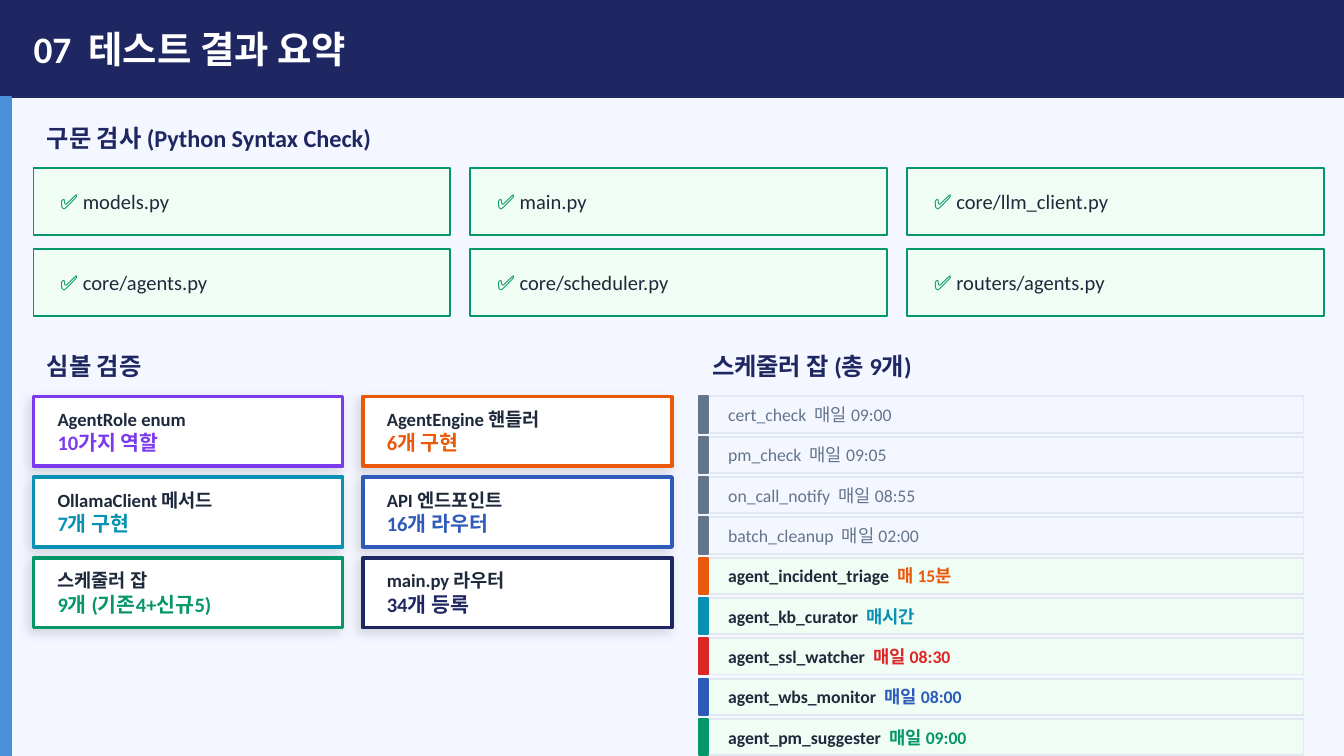
import pptx
import pptx.dml.color
import pptx.enum.shapes
import pptx.enum.text
import pptx.oxml
import pptx.oxml.ns
import pptx.util

RGBColor = pptx.dml.color.RGBColor
NAVY = RGBColor(0x1E, 0x27, 0x61)
SKY = RGBColor(0x4A, 0x90, 0xD9)
BLUE = RGBColor(0x2E, 0x5B, 0xBA)
PAPER = RGBColor(0xF4, 0xF7, 0xFF)
WHITE = RGBColor(0xFF, 0xFF, 0xFF)
MINT = RGBColor(0xF0, 0xFD, 0xF4)
GREEN = RGBColor(0x05, 0x96, 0x69)
VIOLET = RGBColor(0x7C, 0x3A, 0xED)
ORANGE = RGBColor(0xEA, 0x58, 0x0C)
TEAL = RGBColor(0x08, 0x91, 0xB2)
RED = RGBColor(0xDC, 0x26, 0x26)
INK = RGBColor(0x1E, 0x29, 0x3B)
SLATE = RGBColor(0x64, 0x74, 0x8B)
RULE = RGBColor(0xE2, 0xE8, 0xF0)

EMU_PER_PX = 4572  # 200 px to the inch
FONT = "Calibri"

SHADOW = (
    f'<a:effectLst {pptx.oxml.ns.nsdecls("a")}>'
    '<a:outerShdw blurRad="76200" dist="38100" dir="8100000" algn="bl" rotWithShape="0">'
    '<a:srgbClr val="000000"><a:alpha val="12000"/></a:srgbClr>'
    "</a:outerShdw></a:effectLst>"
)


def px(*lengths):
    return [pptx.util.Emu(length * EMU_PER_PX) for length in lengths]


class SlideBuilder:
    def __init__(self, slide):
        self.slide = slide

    def background(self, color):
        fill = self.slide.background.fill
        fill.solid()
        fill.fore_color.rgb = color

    def box(self, left, top, width, height, fill, line, weight=1, shadow=False):
        shape = self.slide.shapes.add_shape(
            pptx.enum.shapes.MSO_SHAPE.RECTANGLE, *px(left, top, width, height))
        shape.fill.solid()
        shape.fill.fore_color.rgb = fill
        shape.line.color.rgb = line
        shape.line.width = pptx.util.Pt(weight)
        shape.shadow.inherit = False
        if shadow:
            properties = shape._element.spPr
            empty = properties.find(pptx.oxml.ns.qn("a:effectLst"))
            properties.replace(empty, pptx.oxml.parse_xml(SHADOW))

    def text(self, left, top, width, height, *runs, inset=True):
        """Each run is (text, size, color, bold)."""
        text_box = self.slide.shapes.add_textbox(*px(left, top, width, height))
        frame = text_box.text_frame
        frame.word_wrap = True
        frame.vertical_anchor = pptx.enum.text.MSO_ANCHOR.MIDDLE
        if not inset:
            frame.margin_left = frame.margin_right = 0
            frame.margin_top = frame.margin_bottom = 0
        for words, size, color, bold in runs:
            run = frame.paragraphs[0].add_run()
            run.text = words
            run.font.name = FONT
            run.font.size = pptx.util.Pt(size)
            run.font.color.rgb = color
            run.font.bold = bold

    def heading(self, left, top, width, words):
        self.text(left, top, width, 70, (words, 13, NAVY, True))

    def file_check(self, left, top, name):
        self.box(left, top, 620, 100, MINT, GREEN)
        self.text(left + 20, top, 580, 100,
                  ("✅ ", 11, GREEN, True), (name, 11, INK, False))

    def symbol_card(self, left, top, label, value, color):
        self.box(left, top, 460, 104, WHITE, color, weight=2, shadow=True)
        self.text(left + 16, top, 428, 104,
                  (f"{label}\n", 10, INK, True), (value, 11, color, True))

    def job_row(self, left, top, name, schedule, color):
        is_new = color != SLATE
        self.box(left, top, 900, 54, MINT if is_new else PAPER, RULE)
        self.box(left, top, 14, 54, color, color)
        if is_new:
            runs = [(name, 9.5, INK, True), (f"  {schedule}", 9.5, color, True)]
        else:
            runs = [(f"{name}  {schedule}", 9.5, color, False)]
        self.text(left + 24, top, 860, 54, *runs)


FILES = ["models.py", "main.py", "core/llm_client.py",
         "core/agents.py", "core/scheduler.py", "routers/agents.py"]

SYMBOLS = [
    ("AgentRole enum", "10가지 역할", VIOLET),
    ("AgentEngine 핸들러", "6개 구현", ORANGE),
    ("OllamaClient 메서드", "7개 구현", TEAL),
    ("API 엔드포인트", "16개 라우터", BLUE),
    ("스케줄러 잡", "9개 (기존4+신규5)", GREEN),
    ("main.py 라우터", "34개 등록", NAVY),
]

JOBS = [
    ("cert_check", "매일 09:00", SLATE),
    ("pm_check", "매일 09:05", SLATE),
    ("on_call_notify", "매일 08:55", SLATE),
    ("batch_cleanup", "매일 02:00", SLATE),
    ("agent_incident_triage", "매 15분", ORANGE),
    ("agent_kb_curator", "매시간", TEAL),
    ("agent_ssl_watcher", "매일 08:30", RED),
    ("agent_wbs_monitor", "매일 08:00", BLUE),
    ("agent_pm_suggester", "매일 09:00", GREEN),
]


def main():
    presentation = pptx.Presentation()
    presentation.slide_width, presentation.slide_height = px(2000, 1125)
    builder = SlideBuilder(presentation.slides.add_slide(presentation.slide_layouts[6]))

    # Title bar and side stripe
    builder.background(PAPER)
    builder.box(0, 0, 2000, 144, NAVY, NAVY)
    builder.box(0, 144, 16, 981, SKY, SKY)
    builder.text(50, 0, 1900, 144, ("07  테스트 결과 요약", 20, WHITE, True), inset=False)

    # Syntax check: three columns
    builder.heading(50, 170, 1900, "구문 검사 (Python Syntax Check)")
    for index, name in enumerate(FILES):
        row, column = divmod(index, 3)
        builder.file_check(50 + column * 650, 250 + row * 120, name)

    # Symbol checks: two columns
    builder.heading(50, 510, 940, "심볼 검증")
    for index, symbol in enumerate(SYMBOLS):
        row, column = divmod(index, 2)
        builder.symbol_card(50 + column * 490, 590 + row * 120, *symbol)

    # Scheduler jobs
    builder.heading(1040, 510, 900, "스케줄러 잡 (총 9개)")
    for row, job in enumerate(JOBS):
        builder.job_row(1040, 590 + row * 60, *job)

    presentation.save("out.pptx")


if __name__ == "__main__":
    main()
